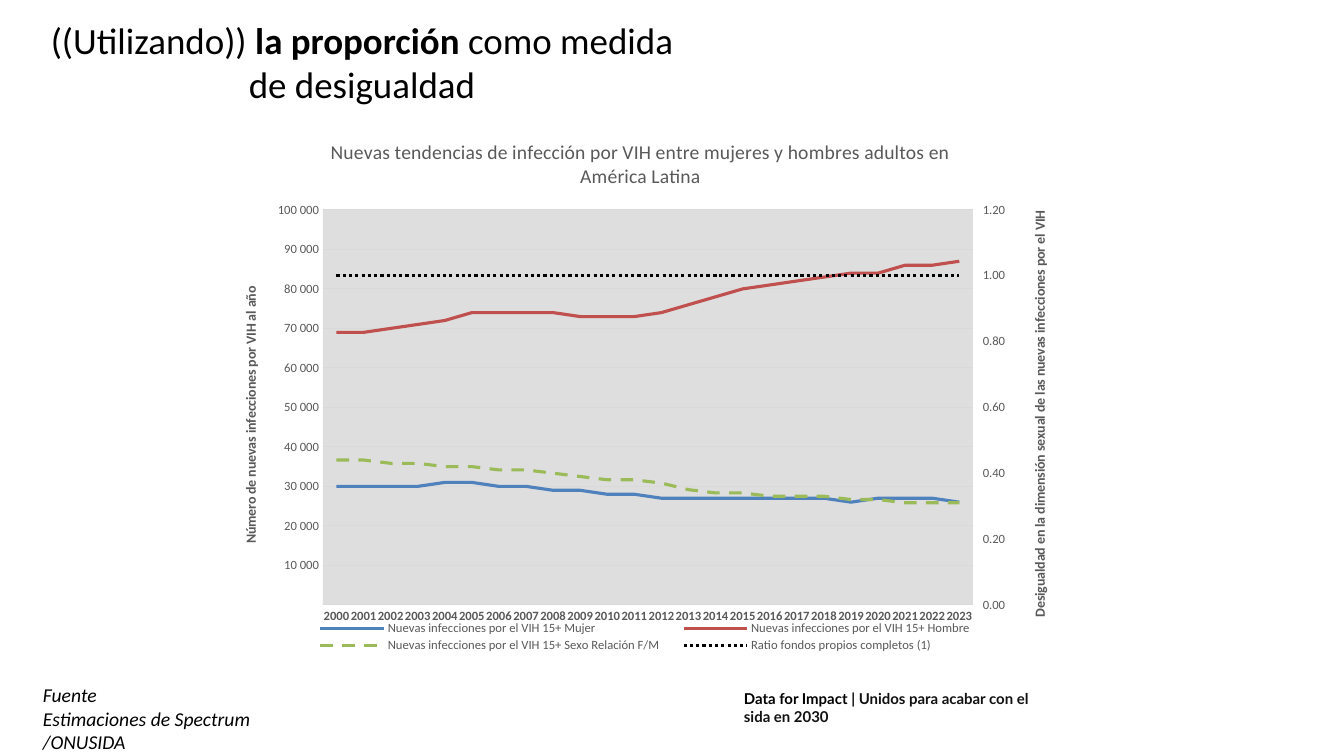
from copy import deepcopy
from lxml import etree
from pptx import Presentation
from pptx.chart.axis import ValueAxis
from pptx.chart.data import CategoryChartData
from pptx.dml.color import RGBColor
from pptx.enum.chart import XL_CHART_TYPE as ChartType, XL_LEGEND_POSITION as LegendPos
from pptx.enum.chart import XL_TICK_MARK as TickMark
from pptx.enum.dml import MSO_LINE as Dash
from pptx.enum.text import MSO_ANCHOR as Anchor, PP_ALIGN as Align
from pptx.oxml import parse_xml
from pptx.oxml.ns import qn, nsdecls
from pptx.util import Pt

PX = 914400 / 100.8
COLORS = {
    "black": "000000", "footer": "111111", "label": "595959", "grid": "D9D9D9",
    "women": "4F81BD", "men": "C0504D", "ratio": "9BBB59", "plot": "BFBFBF",
}
CHART = (216, 118, 849, 547)


def add_text(page, area, spans, size, font, italic=False):
    """Add a wrapped text box; spans hold text, bold and colour."""
    box = page.shapes.add_textbox(*(round(n * PX) for n in area))
    box.text_frame.word_wrap = True
    para = box.text_frame.paragraphs[0]
    for text, bold, color in spans:
        span = para.add_run()
        span.text = text
        span.font.name, span.font.size = font, Pt(size)
        span.font.bold, span.font.italic = bold, italic
        span.font.color.rgb = RGBColor.from_string(COLORS[color])
    return box


def place(element, index, area, inner=False):
    """Give a chart part a fixed position, in slide px."""
    for old in element.findall(qn("c:layout")):
        element.remove(old)
    left, top, width, height = area
    parts = [("x", (left - CHART[0]) / CHART[2]), ("y", (top - CHART[1]) / CHART[3])]
    if width:
        parts += [("w", width / CHART[2]), ("h", height / CHART[3])]
    layout = etree.Element(qn("c:layout"))
    manual = etree.SubElement(layout, qn("c:manualLayout"))
    if inner:
        etree.SubElement(manual, qn("c:layoutTarget")).set("val", "inner")
    for name in "xy":
        etree.SubElement(manual, qn(f"c:{name}Mode")).set("val", "edge")
    for name, share in parts:
        etree.SubElement(manual, qn(f"c:{name}")).set("val", f"{share:.4f}")
    element.insert(index, layout)


deck = Presentation()
deck.slide_width, deck.slide_height = round(1344 * PX), round(756 * PX)
page = deck.slides.add_slide(deck.slide_layouts[6])

# Footer, title and source
add_text(page, (734, 685, 308, 28),
         [("Data for Impact", True, "black"),
          (" | Unidos para acabar con el sida en 2030", True, "footer")], 10.7, "Lato")
title = add_text(page, (33, 20, 658, 84),
                 [("((Utilizando)) ", False, "black"), ("la proporción ", True, "black"),
                  ("como medida de desigualdad", False, "black")], 26.4, "Calibri")
title.text_frame.vertical_anchor = Anchor.MIDDLE
title.text_frame.paragraphs[0].alignment = Align.CENTER
source = add_text(page, (33, 678, 277, 57), [("Fuente", False, "black")], 14, "Calibri", True)
source_para = source.text_frame.paragraphs[0]
source_para.text = "Fuente\vEstimaciones de Spectrum /ONUSIDA"
for span in source_para.runs:
    span.font.name, span.font.size, span.font.italic = "Calibri", Pt(14), True
    span.font.color.rgb = RGBColor.from_string(COLORS["black"])

# Chart data: infections in thousands, ratios as they are
women = [30, 30, 30, 30, 31, 31, 30, 30, 29, 29, 28, 28,
         27, 27, 27, 27, 27, 27, 27, 26, 27, 27, 27, 26]
men = [69, 69, 70, 71, 72, 74, 74, 74, 74, 73, 73, 73,
       74, 76, 78, 80, 81, 82, 83, 84, 84, 86, 86, 87]
ratio = [0.44, 0.44, 0.43, 0.43, 0.42, 0.42, 0.41, 0.41, 0.4, 0.39, 0.38, 0.38,
         0.37, 0.35, 0.34, 0.34, 0.33, 0.33, 0.33, 0.32, 0.32, 0.31, 0.31, 0.31]
data = CategoryChartData()
data.categories = [str(year) for year in range(2000, 2024)]
data.add_series("Nuevas infecciones por el VIH 15+ Mujer", [n * 1000 for n in women])
data.add_series("Nuevas infecciones por el VIH 15+ Hombre", [n * 1000 for n in men])
data.add_series("Nuevas infecciones por el VIH 15+ Sexo Relación F/M", ratio, "0.00")
data.add_series("Ratio fondos propios completos (1)", [1] * len(ratio), "0.00")
chart = page.shapes.add_chart(
    ChartType.LINE, *(round(n * PX) for n in CHART), data).chart
chart.font.name, chart.font.size = "Calibri", Pt(10)
label_color = RGBColor.from_string(COLORS["label"])
grid_color = RGBColor.from_string(COLORS["grid"])

# Lines
plot = chart.plots[0]
plot.vary_by_categories = False
styles = [("women", None), ("men", None), ("ratio", Dash.DASH), ("black", Dash.ROUND_DOT)]
for series, (color, dash) in zip(plot.series, styles):
    series.smooth = False
    line = series.format.line
    line.width = Pt(2.25)
    line.color.rgb = RGBColor.from_string(COLORS[color])
    if dash:
        line.dash_style = dash

# Left and bottom axes
years, left_axis = chart.category_axis, chart.value_axis
years.major_tick_mark = TickMark.NONE
years.format.line.color.rgb = grid_color
years.format.line.width = Pt(0.75)
years.tick_labels.font.bold = True
years_xml = chart.element.find(".//" + qn("c:catAx"))
years_xml.find(qn("c:txPr")).find(qn("a:bodyPr")).set("rot", "0")
skip = etree.Element(qn("c:tickLblSkip"))
skip.set("val", "1")
years_xml.find(qn("c:noMultiLvlLbl")).addprevious(skip)
left_axis.major_tick_mark = TickMark.NONE
left_axis.minimum_scale, left_axis.maximum_scale = 0, 100000
left_axis.major_unit = 10000
left_axis.format.line.fill.background()
left_axis.major_gridlines.format.line.color.rgb = grid_color
left_axis.major_gridlines.format.line.width = Pt(0.75)
left_axis.tick_labels.number_format = r"###\ ###\ ###"
left_axis.tick_labels.number_format_is_linked = False

# Right axis, with the last two lines moved onto it
plot_area = chart.element.find(".//" + qn("c:plotArea"))
left_lines = plot_area.find(qn("c:lineChart"))
right_lines = deepcopy(left_lines)
left_lines.addnext(right_lines)
for group, extra in ((left_lines, slice(2, None)), (right_lines, slice(0, 2))):
    for series_xml in group.findall(qn("c:ser"))[extra]:
        group.remove(series_xml)
for axis_id, number in zip(right_lines.findall(qn("c:axId")), ("5001", "5002")):
    axis_id.set("val", number)
left_xml = plot_area.find(qn("c:valAx"))
right_xml = deepcopy(left_xml)
left_xml.addnext(right_xml)
for tag, value in (("axId", "5002"), ("axPos", "r"), ("crossAx", "5001"), ("crosses", "max")):
    right_xml.find(qn(f"c:{tag}")).set("val", value)
right_xml.addnext(parse_xml(
    f'<c:catAx {nsdecls("c")}><c:axId val="5001"/><c:scaling/><c:delete val="1"/>'
    '<c:axPos val="b"/><c:crossAx val="5002"/><c:crosses val="autoZero"/></c:catAx>'))
right_axis = ValueAxis(right_xml)
right_axis.has_major_gridlines = False
right_axis.major_tick_mark = TickMark.OUTSIDE
right_axis.maximum_scale, right_axis.major_unit = 1.2, 0.2
right_axis.tick_labels.number_format = "0.00"

# Titles and legend
chart.has_legend = True
chart.legend.position = LegendPos.BOTTOM
chart.legend.include_in_layout = False
for part in (years.tick_labels, left_axis.tick_labels, right_axis.tick_labels, chart.legend):
    part.font.name, part.font.size = "Calibri", Pt(9)
    part.font.color.rgb = label_color
chart.has_title = True
chart.chart_title.include_in_layout = False
titles = [
    (chart.chart_title, 14, False,
     "Nuevas tendencias de infección por VIH entre mujeres y hombres adultos en América Latina"),
    (left_axis.axis_title, 10, True, "Número de nuevas infecciones por VIH al año"),
    (right_axis.axis_title, 10, True,
     "Desigualdad en la dimensión sexual de las nuevas infecciones por el VIH"),
]
for heading, size, bold, text in titles:
    heading.text_frame.text = text
    font = heading.text_frame.paragraphs[0].runs[0].font
    font.name, font.size, font.bold = "Calibri", Pt(size), bold
    font.color.rgb = label_color
for axis_xml, area in ((left_xml, (239, 284, 0, 0)), (right_xml, (1028, 208, 0, 0))):
    axis_title = axis_xml.find(qn("c:title"))
    axis_title.find(".//" + qn("a:bodyPr")).set("rot", "-5400000")
    place(axis_title, 1, area)
place(chart.legend._element, 1, (300, 619, 690, 36))

# Plot area
place(plot_area, 0, (323, 210, 650, 395), inner=True)
plot_area.append(parse_xml(
    f'<c:spPr {nsdecls("c", "a")}><a:solidFill><a:srgbClr val="{COLORS["plot"]}">'
    '<a:alpha val="50000"/></a:srgbClr></a:solidFill></c:spPr>'))

deck.save("out.pptx")
